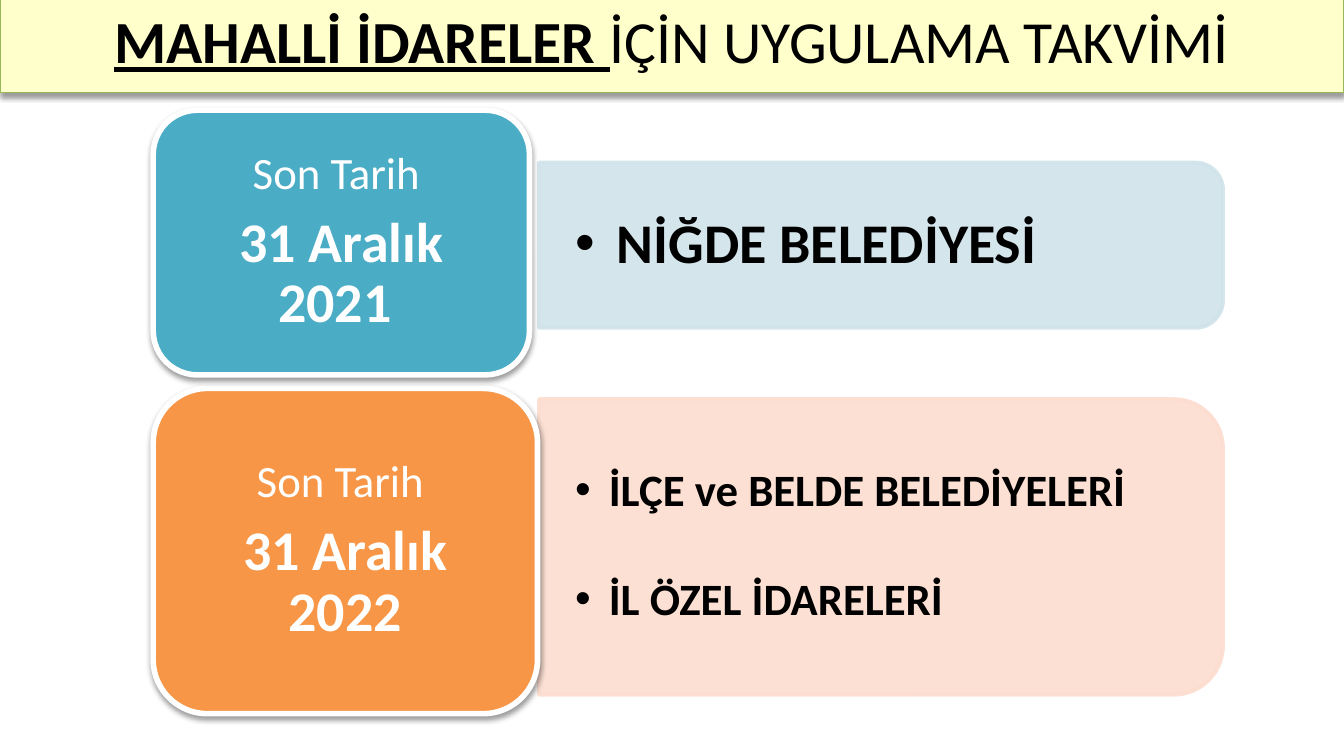
from lxml import etree
from pptx import Presentation
from pptx.dml.color import RGBColor
from pptx.enum.shapes import MSO_SHAPE
from pptx.enum.text import MSO_ANCHOR, MSO_AUTO_SIZE, PP_ALIGN
from pptx.oxml.ns import qn
from pptx.util import Inches, Pt

ROUND_RECT = MSO_SHAPE.ROUNDED_RECTANGLE
ROUND_SIDE = MSO_SHAPE.ROUND_2_SAME_RECTANGLE
MIDDLE = MSO_ANCHOR.MIDDLE
NO_FIT = MSO_AUTO_SIZE.NONE
CENTER = PP_ALIGN.CENTER
LEFT = PP_ALIGN.LEFT

BLACK = RGBColor(0x00, 0x00, 0x00)
WHITE = RGBColor(0xFF, 0xFF, 0xFF)
CREAM = RGBColor(0xFF, 0xFF, 0xCC)
OLIVE = RGBColor(0x98, 0xB9, 0x55)
TEAL = RGBColor(0x4B, 0xAC, 0xC6)
PALE_BLUE = RGBColor(0xD0, 0xE3, 0xEA)
ORANGE = RGBColor(0xF7, 0x96, 0x46)
PALE_ORANGE = RGBColor(0xFC, 0xDD, 0xCF)

FONT = "Calibri"
SLIDE_WIDTH = 10
SLIDE_HEIGHT = SLIDE_WIDTH * 9 / 16
PANEL_LEFT, PANEL_WIDTH = 4.01, 5.09
CARD_LEFT = 1.14

ROWS = [
    {
        "card": (0.82, 2.8, 1.97), "card_color": TEAL, "date": "31 Aralık 2021 ",
        "panel": (1.21, 1.23), "panel_color": PALE_BLUE,
        "list": (1.27, 5.03, 1.11), "items": ["NİĞDE BELEDİYESİ"],
        "size": 30, "indent": 0.31,
    },
    {
        "card": (2.89, 2.86, 2.42), "card_color": ORANGE, "date": "31 Aralık 2022",
        "panel": (2.97, 2.2), "panel_color": PALE_ORANGE,
        "list": (3.07, 4.98, 1.99),
        "items": ["İLÇE ve BELDE BELEDİYELERİ", "İL ÖZEL İDARELERİ"],
        "size": 24, "indent": 0.25,
    },
]


def apply(target, values):
    for name, value in values.items():
        setattr(target, name, value)


def place(shape, left, top, width, height):
    apply(shape, {"left": Inches(left), "top": Inches(top),
                  "width": Inches(width), "height": Inches(height)})


def paint(shape, fill, line, line_width):
    shape.shadow.inherit = False
    shape.fill.solid()
    shape.fill.fore_color.rgb = fill
    shape.line.color.rgb = line
    shape.line.width = Pt(line_width)


def add_alpha(color, percent):
    etree.SubElement(color, qn("a:alpha"), val=str(percent * 1000))


def add_shadow(shape):
    effects = shape.element.spPr.find(qn("a:effectLst"))
    shadow = etree.SubElement(effects, qn("a:outerShdw"), blurRad=str(Pt(3.1)),
                              dist=str(Pt(1.6)), dir="5400000", rotWithShape="0")
    add_alpha(etree.SubElement(shadow, qn("a:srgbClr"), val=str(BLACK)), 38)


def add_span(para, text, size, color, **style):
    span = para.add_run()
    span.text = text
    span.font.color.rgb = color
    apply(span.font, {"name": FONT, "size": Pt(size), "bold": False, **style})


def paragraphs(frame, texts):
    for index, text in enumerate(texts):
        yield (frame.add_paragraph() if index else frame.paragraphs[0]), index, text


def fill_title(title):
    place(title, 0, -0.1, SLIDE_WIDTH, 0.79)
    paint(title, CREAM, OLIVE, 0.75)
    add_shadow(title)
    apply(title.text_frame, {"word_wrap": True, "auto_size": NO_FIT,
                             "vertical_anchor": MIDDLE})
    para = title.text_frame.paragraphs[0]
    para.alignment = CENTER
    add_span(para, "MAHALLİ İDARELER ", 32, BLACK, bold=True, underline=True)
    add_span(para, "İÇİN UYGULAMA TAKVİMİ", 32, BLACK)


def add_panel(slide, row):
    top, height = row["panel"]
    shift = (PANEL_WIDTH - height) / 2
    panel = slide.shapes.add_shape(ROUND_SIDE, 0, 0, 0, 0)
    place(panel, PANEL_LEFT + shift, top - shift, height, PANEL_WIDTH)
    panel.rotation = 90
    paint(panel, row["panel_color"], row["panel_color"], 2)
    for color in panel.element.spPr.iter(qn("a:srgbClr")):
        add_alpha(color, 90)
    return panel


def fill_list(body, row):
    top, width, height = row["list"]
    place(body, PANEL_LEFT, top, width, height)
    frame = body.text_frame
    apply(frame, {"word_wrap": True, "auto_size": NO_FIT, "vertical_anchor": MIDDLE,
                  "margin_left": Inches(0.27), "margin_right": Inches(0.27),
                  "margin_top": Inches(0.14), "margin_bottom": Inches(0.14)})
    for para, index, text in paragraphs(frame, row["items"]):
        properties = para._p.get_or_add_pPr()
        properties.set("marL", str(Inches(row["indent"])))
        properties.set("indent", str(-Inches(row["indent"])))
        etree.SubElement(properties, qn("a:buChar"), char="•")
        apply(para, {"level": 1, "alignment": LEFT, "line_spacing": 0.9,
                     "space_before": Pt(30 if index else 0), "space_after": Pt(2.7)})
        add_span(para, text, row["size"], BLACK, bold=True)


def add_card(slide, row):
    card = slide.shapes.add_shape(ROUND_RECT, 0, 0, 0, 0)
    place(card, CARD_LEFT, *row["card"])
    paint(card, row["card_color"], WHITE, 3)
    add_shadow(card)
    apply(card.text_frame, {"word_wrap": True, "vertical_anchor": MIDDLE})
    for para, index, text in paragraphs(card.text_frame, ["Son Tarih ", row["date"]]):
        apply(para, {"alignment": CENTER, "line_spacing": 0.9,
                     "space_after": Pt(0 if index else 8)})
        add_span(para, text, 30 if index else 24, WHITE, bold=bool(index))


def main():
    deck = Presentation()
    deck.slide_width, deck.slide_height = Inches(SLIDE_WIDTH), Inches(SLIDE_HEIGHT)
    slide = deck.slides.add_slide(deck.slide_layouts[3])
    title, *bodies = slide.placeholders
    fill_title(title)
    for body, row in zip(bodies, ROWS):
        panel = add_panel(slide, row)
        body.element.addprevious(panel.element)
        fill_list(body, row)
        add_card(slide, row)
    deck.save("out.pptx")


if __name__ == "__main__":
    main()
